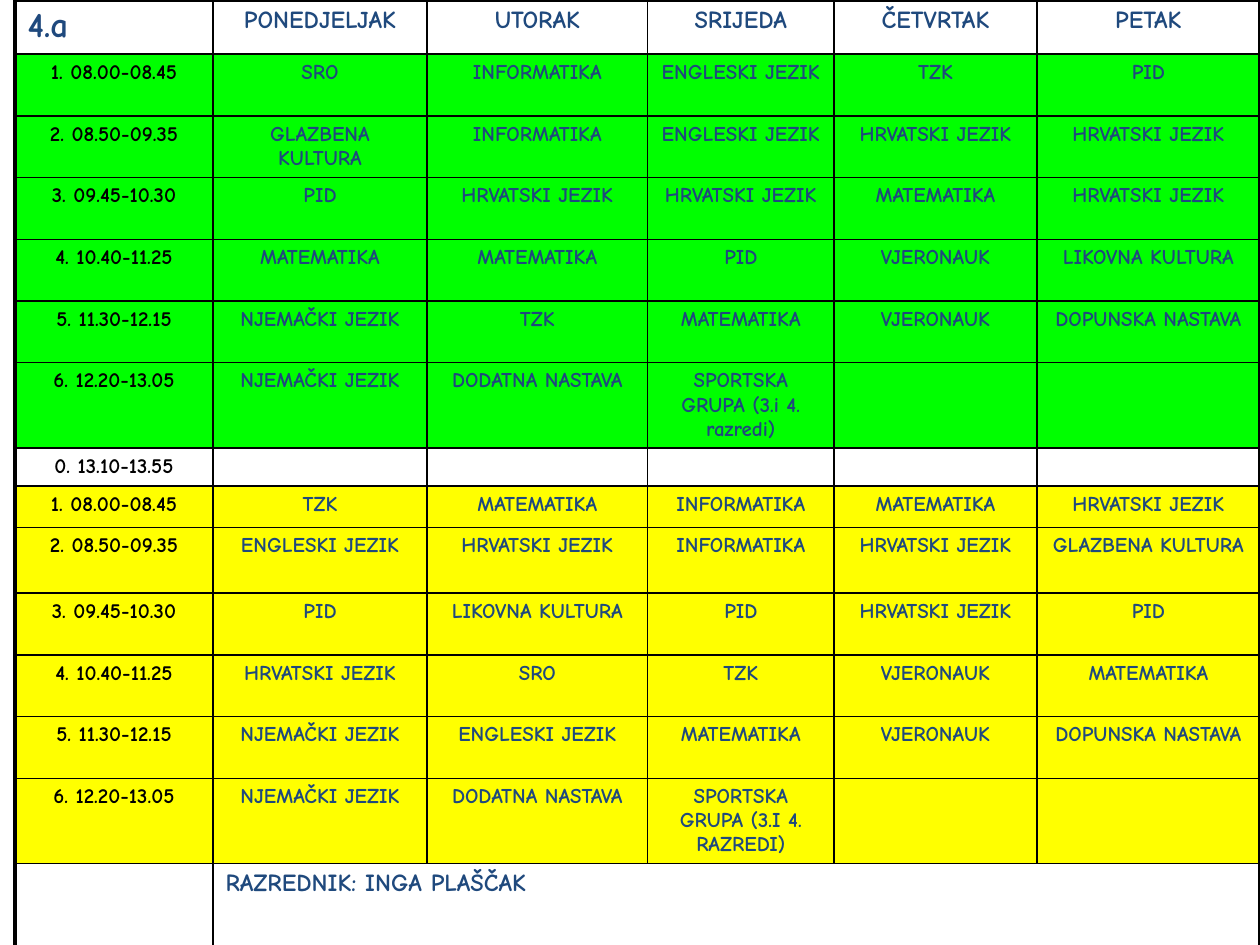
from lxml import etree
from pptx import Presentation
from pptx import util as u
from pptx.dml.color import RGBColor
from pptx.enum import text
from pptx.oxml import ns

COLORS = {"ink": "1F497D", "time": "000000", "border": "000000",
          "green": "00FF00", "yellow": "FFFF00"}
FONT = "Comic Neue"
THIN, THICK = 1, 2.25
COLUMN_WIDTHS = [1.57, 1.7, 1.75, 1.48, 1.61, 1.77]
ROW_HEIGHTS = [0.43] + [0.49] * 6 + [0.29, 0.33, 0.52] + [0.49] * 4 + [0.83]

HEADER = ["4.a", "PONEDJELJAK", "UTORAK", "SRIJEDA", "ČETVRTAK", "PETAK"]
PERIODS = ["1. 08.00-08.45", "2. 08.50-09.35", "3. 09.45-10.30",
           "4. 10.40-11.25", "5. 11.30-12.15", "6. 12.20-13.05"]
BREAK = ["0. 13.10-13.55"] + [""] * 5
FIRST_WEEK = [
    ["SRO", "INFORMATIKA", "ENGLESKI JEZIK", "TZK", "PID"],
    ["GLAZBENA KULTURA", "INFORMATIKA", "ENGLESKI JEZIK", "HRVATSKI JEZIK", "HRVATSKI JEZIK"],
    ["PID", "HRVATSKI JEZIK", "HRVATSKI JEZIK", "MATEMATIKA", "HRVATSKI JEZIK"],
    ["MATEMATIKA", "MATEMATIKA", "PID", "VJERONAUK", "LIKOVNA KULTURA"],
    ["NJEMAČKI JEZIK", "TZK", "MATEMATIKA", "VJERONAUK", "DOPUNSKA NASTAVA"],
    ["NJEMAČKI JEZIK", "DODATNA NASTAVA", "SPORTSKA GRUPA (3.i 4. razredi)", "", ""],
]
SECOND_WEEK = [
    ["TZK", "MATEMATIKA", "INFORMATIKA", "MATEMATIKA", "HRVATSKI JEZIK"],
    ["ENGLESKI JEZIK", "HRVATSKI JEZIK", "INFORMATIKA", "HRVATSKI JEZIK", "GLAZBENA KULTURA"],
    ["PID", "LIKOVNA KULTURA", "PID", "HRVATSKI JEZIK", "PID"],
    ["HRVATSKI JEZIK", "SRO", "TZK", "VJERONAUK", "MATEMATIKA"],
    ["NJEMAČKI JEZIK", "ENGLESKI JEZIK", "MATEMATIKA", "VJERONAUK", "DOPUNSKA NASTAVA"],
    ["NJEMAČKI JEZIK", "DODATNA NASTAVA", "SPORTSKA GRUPA (3.I 4. RAZREDI)", "", ""],
]
FOOTER = ["", "RAZREDNIK: INGA PLAŠČAK"] + [""] * 4


def timetable_rows():
    """Return (texts, fill name or None) for each row, top to bottom."""
    def week(lessons, fill):
        return [([period] + day, fill) for period, day in zip(PERIODS, lessons)]

    return ([(HEADER, None)] + week(FIRST_WEEK, "green") + [(BREAK, None)]
            + week(SECOND_WEEK, "yellow") + [(FOOTER, None)])


def write_text(cell, content, size, color, centred):
    paragraph = cell.text_frame.paragraphs[0]
    paragraph.alignment = text.PP_ALIGN.CENTER if centred else text.PP_ALIGN.LEFT
    if not content:  # an empty cell still takes its height from its font size
        etree.SubElement(paragraph._p, ns.qn("a:endParaRPr"), sz=str(size * 100))
        return
    run = paragraph.add_run()
    run.text = content
    for name, value in {"name": FONT, "size": u.Pt(size), "bold": True}.items():
        setattr(run.font, name, value)
    run.font.color.rgb = RGBColor.from_string(COLORS[color])


def draw_borders(cell, widths):
    """Draw the cell's sides; widths maps L, R, T, B to points."""
    properties = cell._tc.get_or_add_tcPr()
    for side, width in widths.items():
        line = etree.SubElement(properties, ns.qn(f"a:ln{side}"), w=str(u.Pt(width)))
        fill = etree.SubElement(line, ns.qn("a:solidFill"))
        etree.SubElement(fill, ns.qn("a:srgbClr"), val=COLORS["border"])


def fill_cell(cell, fill):
    if fill is None:
        cell.fill.background()
    else:
        cell.fill.solid()
        cell.fill.fore_color.rgb = RGBColor.from_string(COLORS[fill])


def text_format(row, column, last_row):
    """Return size, colour and centring for the text at a grid place."""
    if row == 0:
        return (20, "ink", False) if column == 0 else (14, "ink", True)
    if row == last_row:
        return 14, "ink", False
    return 12, "time" if column == 0 else "ink", True


def add_timetable(slide, rows):
    last_row, last_column = len(rows) - 1, len(COLUMN_WIDTHS) - 1
    frame = slide.shapes.add_table(len(rows), len(COLUMN_WIDTHS), u.Inches(0.12), 0,
                                   u.Inches(9.88), u.Inches(7.8))
    table = frame.table
    table.first_row = table.horz_banding = False
    for column, width in zip(table.columns, COLUMN_WIDTHS):
        column.width = u.Inches(width)
    for row, height in zip(table.rows, ROW_HEIGHTS):
        row.height = u.Inches(height)
    frame.height = u.Inches(7.8)
    table.cell(last_row, 1).merge(table.cell(last_row, last_column))

    for row, (contents, fill) in enumerate(rows):
        for column, content in enumerate(contents):
            cell = table.cell(row, column)
            if cell.is_spanned:
                continue
            right_column = column + (cell.span_width if cell.is_merge_origin else 1) - 1
            outer = {"L": column == 0, "R": right_column == last_column,
                     "T": row == 0, "B": row == last_row}
            draw_borders(cell, {side: THICK if edge else THIN for side, edge in outer.items()})
            fill_cell(cell, fill)
            write_text(cell, content, *text_format(row, column, last_row))


def main():
    presentation = Presentation()
    presentation.slide_width, presentation.slide_height = u.Inches(10), u.Inches(7.5)
    slide = presentation.slides.add_slide(presentation.slide_layouts[6])
    add_timetable(slide, timetable_rows())
    presentation.save("out.pptx")


if __name__ == "__main__":
    main()
